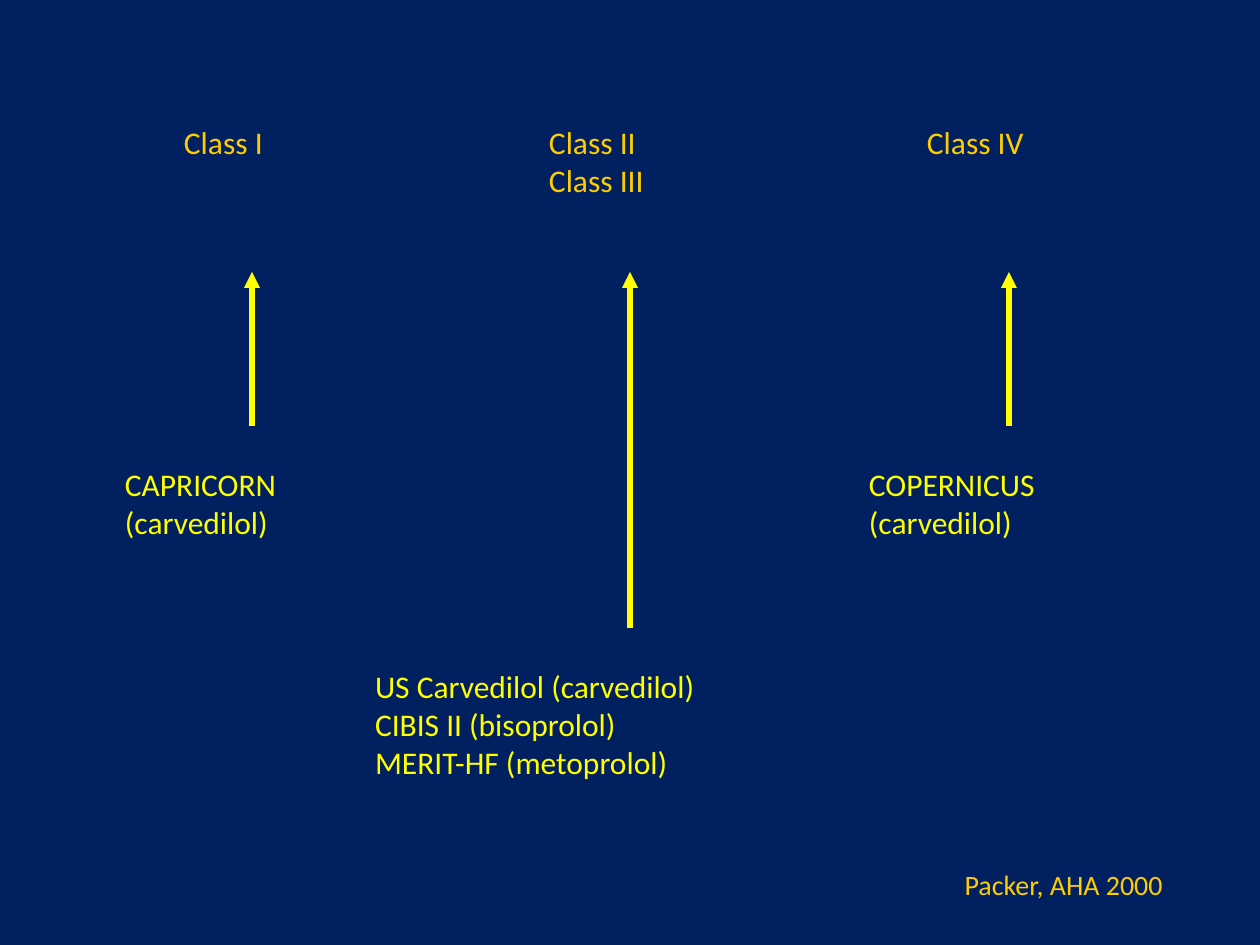
from lxml import etree
from pptx import Presentation
from pptx import util as u
from pptx.dml.color import RGBColor
from pptx.enum import shapes, text
from pptx.oxml import ns

EMU_PER_PX = 914400 / 126
COLORS = {"background": "002060", "heading": "FFCC00", "trial": "FFFF00"}
LABEL = {"word_wrap": False, "margin_left": 0, "margin_top": 0,
         "margin_right": 0, "margin_bottom": 0}
HEADING_TOP, ARROW_TOP, TRIAL_GAP = 0, 149, 39


def px(length):
    """Turn a length in px into EMU."""
    return u.Emu(round(length * EMU_PER_PX))


def color(name):
    """Look up a named colour."""
    return RGBColor.from_string(COLORS[name])


def add_text(page, box, wording, color_name, size=18, frame_format=LABEL,
             align=text.PP_ALIGN.LEFT):
    """Place a text box holding the wording in one font and colour."""
    frame = page.shapes.add_textbox(*map(px, box)).text_frame
    frame.text = wording
    frame.auto_size = text.MSO_AUTO_SIZE.SHAPE_TO_FIT_TEXT
    for name, value in frame_format.items():
        setattr(frame, name, value)
    for para in frame.paragraphs:
        para.alignment = align
        for span in para.runs:
            for name, value in {"name": "Calibri", "size": u.Pt(size)}.items():
                setattr(span.font, name, value)
            span.font.color.rgb = color(color_name)


def add_arrow(page, x, top, bottom):
    """Draw an upward arrow at x."""
    arrow = page.shapes.add_connector(
        shapes.MSO_CONNECTOR.STRAIGHT, px(x), px(top), px(x), px(bottom))
    arrow.line.width = u.Pt(3)
    arrow.line.color.rgb = color("trial")
    properties = arrow.line._get_or_add_ln()
    etree.SubElement(properties, ns.qn("a:headEnd"), type="triangle")
    etree.SubElement(arrow._element.spPr, ns.qn("a:effectLst"))


def add_class_column(page, box, heading, heading_box, trials, trials_box, arrow):
    """Place a heading, an arrow and the trials below it, relative to a box."""
    left, top = box
    arrow_x, arrow_length = arrow
    arrow_top = top + ARROW_TOP
    arrow_bottom = arrow_top + arrow_length
    heading_x, *heading_size = heading_box
    trials_x, *trials_size = trials_box
    add_text(page, (left + heading_x, top + HEADING_TOP, *heading_size),
             heading, "heading")
    add_arrow(page, left + arrow_x, arrow_top, arrow_bottom)
    add_text(page, (left + trials_x, arrow_bottom + TRIAL_GAP, *trials_size),
             trials, "trial")


def add_credit(page, box):
    """Place the citation, right aligned in its box."""
    add_text(page, box, "Packer, AHA 2000", "heading", 16,
             {"word_wrap": True}, text.PP_ALIGN.RIGHT)


def main():
    """Build and save the deck."""
    deck = Presentation()
    deck.slide_width, deck.slide_height = px(1260), px(945)
    page = deck.slides.add_slide(deck.slide_layouts[6])
    page.background.fill.solid()
    page.background.fill.fore_color.rgb = color("background")
    columns = [
        ((125, 123), "Class I", (59, 135, 50),
         "CAPRICORN\n(carvedilol)", (0, 255, 101), (127, 154)),
        ((375, 123), "Class II\nClass III", (174, 159, 101),
         "US Carvedilol (carvedilol)\vCIBIS II (bisoprolol)\v"
         "MERIT-HF (metoprolol)", (0, 509, 202), (255, 356)),
        ((869, 123), "Class IV", (58, 164, 50),
         "COPERNICUS\n(carvedilol)", (0, 280, 101), (140, 154)),
    ]
    for column in columns:
        add_class_column(page, *column)
    add_credit(page, (811, 861, 364, 45))
    deck.save("out.pptx")


if __name__ == "__main__":
    main()
